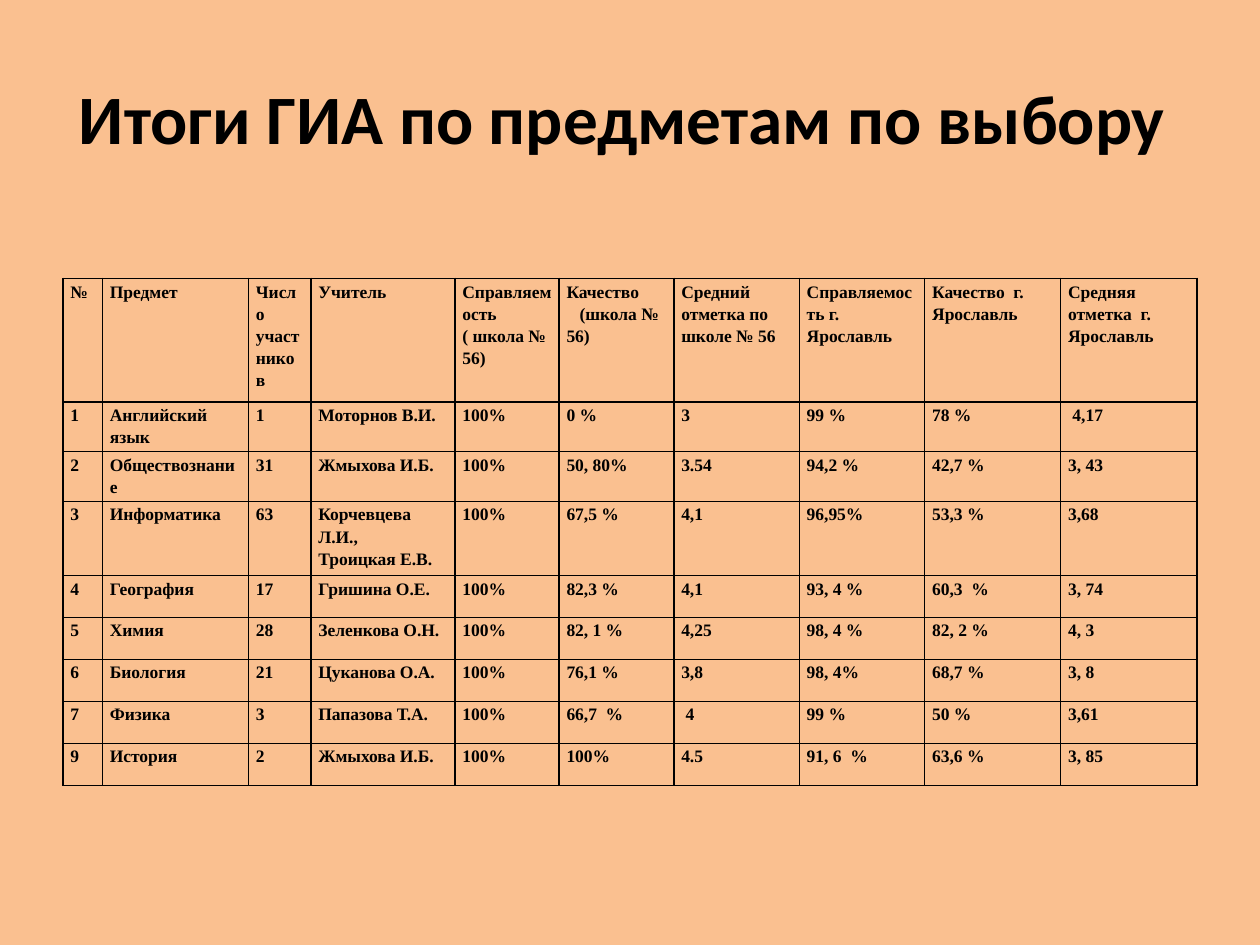
import pptx
import pptx.dml.color
import pptx.enum.text
import pptx.oxml
import pptx.oxml.ns
import pptx.util

Pt = pptx.util.Pt
COLOURS = {"background": "FAC090", "ink": "000000"}
TITLE = {"name": "Calibri", "size": Pt(39.6), "bold": True}
BODY = {"name": "Times New Roman", "size": Pt(10), "bold": True}
COLUMN_WIDTHS = [22.5, 83.5, 35.7, 82.3, 59.5, 65.6, 71.7, 71.7, 77.7, 77.8]
ROW_HEIGHTS = [70.6, 28.4, 28.4, 42.4] + [24] * 5
QUALITY_HEADER = "Качество\n(школа № 56)"
RESULTS = [
    ["№", "Предмет", "Число участников", "Учитель", "Справляемость ( школа № 56)",
     QUALITY_HEADER, "Средний отметка по школе № 56", "Справляемость г. Ярославль",
     "Качество  г. Ярославль", "Средняя отметка  г. Ярославль"],
    ["1", "Английский язык", "1", "Моторнов В.И.", "100%", "0 %", "3", "99 %", "78 %", " 4,17"],
    ["2", "Обществознание", "31", "Жмыхова И.Б.", "100%", "50, 80%", "3.54", "94,2 %", "42,7 %", "3, 43"],
    ["3", "Информатика", "63", "Корчевцева Л.И.,\nТроицкая Е.В.", "100%", "67,5 %", "4,1", "96,95%",
     "53,3 %", "3,68"],
    ["4", "География", "17", "Гришина О.Е.", "100%", "82,3 %", "4,1", "93, 4 %", "60,3  %", "3, 74"],
    ["5", "Химия", "28", "Зеленкова О.Н.", "100%", "82, 1 %", "4,25", "98, 4 %", "82, 2 %", "4, 3"],
    ["6", "Биология", "21", "Цуканова О.А.", "100%", "76,1 %", "3,8", "98, 4%", "68,7 %", "3, 8"],
    ["7", "Физика", "3", "Папазова Т.А.", "100%", "66,7  %", " 4", "99 %", "50 %", "3,61"],
    ["9", "История", "2", "Жмыхова И.Б.", "100%", "100%", "4.5", "91, 6  %", "63,6 %", "3, 85"],
]


def apply(target, values):
    for name, value in values.items():
        setattr(target, name, value)


def colour(name):
    return pptx.dml.color.RGBColor.from_string(COLOURS[name])


class SlideBuilder:
    def __init__(self, deck):
        self.page = deck.slides.add_slide(deck.slide_layouts[6])
        fill = self.page.background.fill
        fill.solid()
        fill.fore_color.rgb = colour("background")

    def text(self, frame, text, font, layout):
        frame.text = text
        for para in frame.paragraphs:
            apply(para, layout)
            for span in para.runs:
                apply(span.font, font)
                span.font.color.rgb = colour("ink")

    def title(self, text, left, top, width, height):
        box = self.page.shapes.add_textbox(Pt(left), Pt(top), Pt(width), Pt(height))
        apply(box.text_frame, {"word_wrap": True,
                               "vertical_anchor": pptx.enum.text.MSO_ANCHOR.MIDDLE})
        self.text(box.text_frame, text, TITLE, {"alignment": pptx.enum.text.PP_ALIGN.CENTER})

    def cell(self, cell, text):
        apply(cell, {"margin_left": Pt(4.3), "margin_right": Pt(4.3),
                     "margin_top": Pt(0.7), "margin_bottom": Pt(0)})
        self.text(cell.text_frame, text, BODY, {"line_spacing": 1.15, "space_after": Pt(0)})
        cell.text_frame.paragraphs[-1].space_after = Pt(10)
        properties = cell._tc.get_or_add_tcPr()
        for side in ("lnL", "lnR", "lnT", "lnB"):
            properties.append(pptx.oxml.parse_xml(
                f'<a:{side} {pptx.oxml.ns.nsdecls("a")} w="{Pt(1)}"><a:solidFill>'
                f'<a:srgbClr val="{COLOURS["ink"]}"/></a:solidFill></a:{side}>'))
        cell.fill.background()

    def table(self, rows, left, top, widths, heights):
        table = self.page.shapes.add_table(len(rows), len(widths), Pt(left), Pt(top),
                                           Pt(sum(widths)), Pt(sum(heights))).table
        apply(table, {"first_row": False, "horz_banding": False})
        for column, width in zip(table.columns, widths):
            column.width = Pt(width)
        for row, height, texts in zip(table.rows, heights, rows):
            row.height = Pt(height)
            for cell, text in zip(row.cells, texts):
                self.cell(cell, text)
        return table


def main():
    deck = pptx.Presentation()
    apply(deck, {"slide_width": Pt(720), "slide_height": Pt(540)})
    builder = SlideBuilder(deck)
    builder.title("Итоги ГИА по предметам по выбору ", 36, 21.6, 648, 90)
    table = builder.table(RESULTS, 36, 159.1, COLUMN_WIDTHS, ROW_HEIGHTS)
    quality_cell = table.cell(0, RESULTS[0].index(QUALITY_HEADER))
    school_line = quality_cell.text_frame.paragraphs[1]
    school_line._p.get_or_add_pPr().set("indent", str(Pt(7.5)))
    deck.save("out.pptx")


if __name__ == "__main__":
    main()
